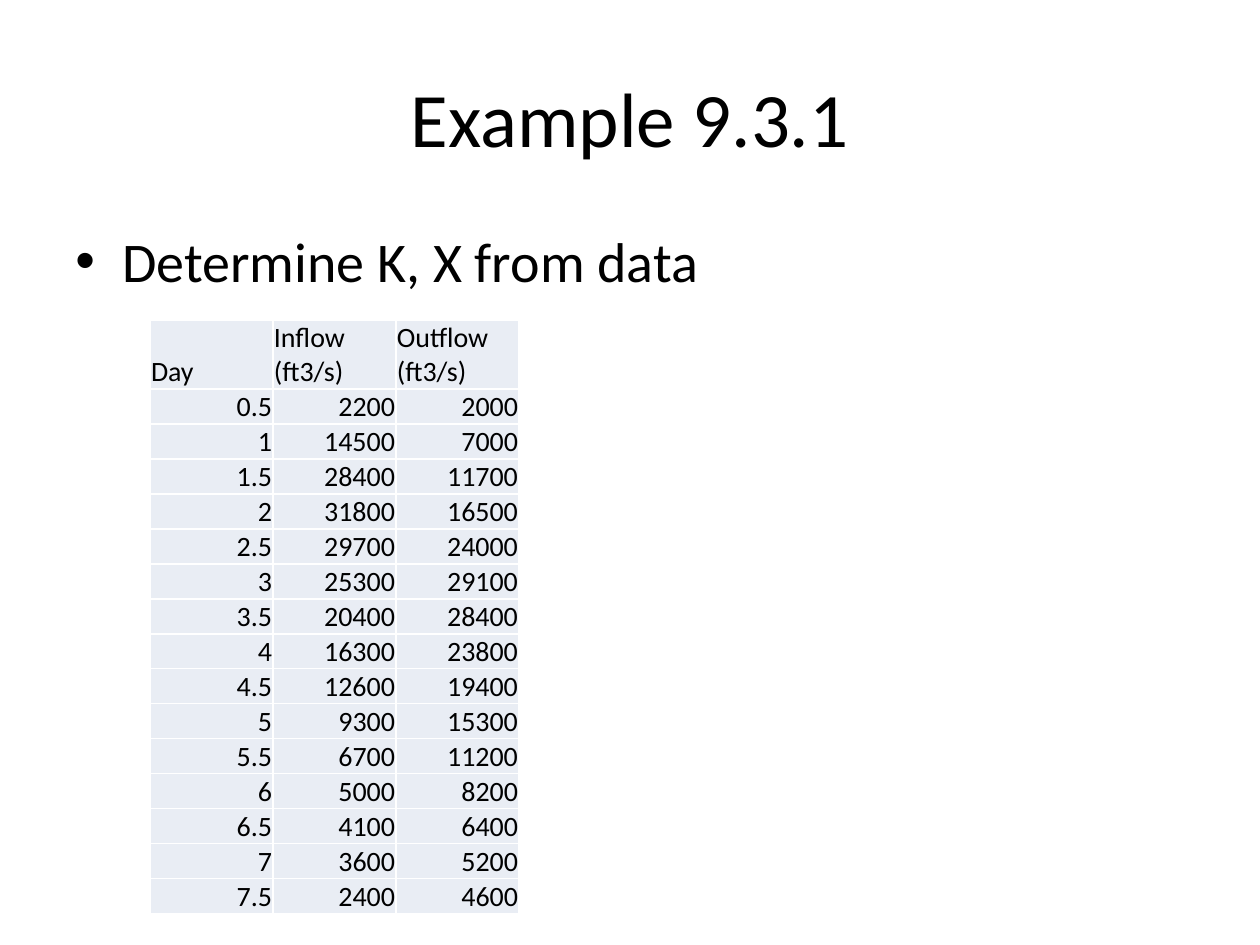
from typing import NamedTuple

from lxml.etree import SubElement
from pptx import Presentation
from pptx.dml.color import RGBColor
from pptx.enum.text import MSO_ANCHOR as Anchor, PP_ALIGN as Align
from pptx.oxml.ns import qn
from pptx.util import Emu, Pt

PX_PER_INCH = 126
FONT = "Calibri"
BLACK = RGBColor(0x00, 0x00, 0x00)
WHITE = RGBColor(0xFF, 0xFF, 0xFF)
PALE_BLUE = RGBColor(0xE9, 0xED, 0xF4)


class Box(NamedTuple):
    left: int
    top: int
    width: int
    height: int


class Reading(NamedTuple):
    day: float
    inflow: int
    outflow: int


HEADERS = ("Day", "Inflow (ft3/s)", "Outflow (ft3/s)")
FLOWS = (
    (2200, 2000), (14500, 7000), (28400, 11700), (31800, 16500), (29700, 24000),
    (25300, 29100), (20400, 28400), (16300, 23800), (12600, 19400), (9300, 15300),
    (6700, 11200), (5000, 8200), (4100, 6400), (3600, 5200), (2400, 4600),
)
# Readings are taken every half day
READINGS = [Reading(i / 2, *flow) for i, flow in enumerate(FLOWS, start=1)]

TITLE = Box(63, 38, 1134, 158)
BODY = Box(63, 220, 1134, 624)
TABLE_LEFT, TABLE_TOP = 150, 320
COL_WIDTH, HEADER_HEIGHT, ROW_HEIGHT = 123, 69, 35


def px(n: int) -> Emu:
    return Emu(round(n * 914400 / PX_PER_INCH))


def place(sp, box: Box) -> None:
    sp.left, sp.top, sp.width, sp.height = map(px, box)


def write(tf, text: str, *, size: int, align=Align.LEFT, anchor=Anchor.TOP):
    tf.word_wrap = True
    tf.vertical_anchor = anchor
    p = tf.paragraphs[0]
    p.alignment = align
    r = p.add_run()
    r.text = text
    r.font.name, r.font.size = FONT, Pt(size)
    r.font.color.rgb = BLACK
    return p


def add_bullet(p, indent: int) -> None:
    pPr = p._p.get_or_add_pPr()
    pPr.set("marL", str(px(indent)))
    pPr.set("indent", str(-px(indent)))
    SubElement(pPr, qn("a:buFont"), typeface="Arial")
    SubElement(pPr, qn("a:buChar"), char="•")


def format_cell(cell) -> None:
    cell.margin_left = cell.margin_right = cell.margin_top = px(1)
    cell.margin_bottom = 0
    tcPr = cell._tc.get_or_add_tcPr()
    for side in ("lnL", "lnR", "lnT", "lnB"):
        ln = SubElement(tcPr, qn(f"a:{side}"), w=str(Pt(1)))
        fill = SubElement(ln, qn("a:solidFill"))
        SubElement(fill, qn("a:srgbClr"), val=str(WHITE))
    cell.fill.solid()
    cell.fill.fore_color.rgb = PALE_BLUE


def add_flow_table(s) -> None:
    rows = [HEADERS] + [[f"{value:g}" for value in reading] for reading in READINGS]
    table = s.shapes.add_table(
        len(rows), len(HEADERS), px(TABLE_LEFT), px(TABLE_TOP),
        px(COL_WIDTH * len(HEADERS)), px(HEADER_HEIGHT + ROW_HEIGHT * len(READINGS)),
    ).table
    table.first_row = table.horz_banding = False
    for column in table.columns:
        column.width = px(COL_WIDTH)
    for i, values in enumerate(rows):
        table.rows[i].height = px(ROW_HEIGHT if i else HEADER_HEIGHT)
        for j, text in enumerate(values):
            cell = table.cell(i, j)
            format_cell(cell)
            write(cell.text_frame, text, size=16, align=Align.RIGHT if i else Align.LEFT)
            cell.vertical_anchor = Anchor.BOTTOM


def main() -> None:
    prs = Presentation()
    prs.slide_width, prs.slide_height = px(1260), px(945)
    s = prs.slides.add_slide(prs.slide_layouts[5])

    # Title
    title = s.shapes.title
    place(title, TITLE)
    write(title.text_frame, "Example 9.3.1", size=44, align=Align.CENTER, anchor=Anchor.MIDDLE)

    # Task
    body = s.shapes.add_textbox(*map(px, BODY))
    add_bullet(write(body.text_frame, "Determine K, X from data", size=32), indent=47)

    # Measured flows
    add_flow_table(s)

    prs.save("out.pptx")


if __name__ == "__main__":
    main()
